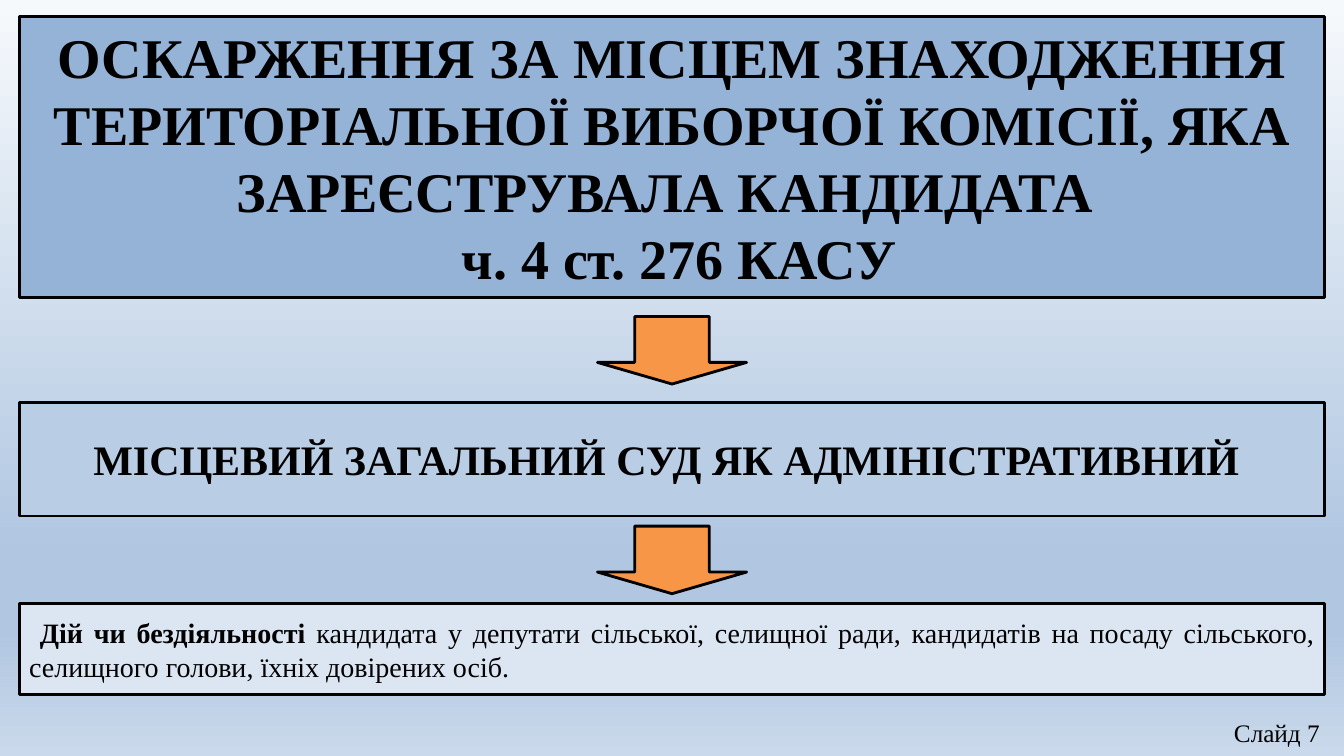
from dataclasses import dataclass

from lxml import etree
from pptx import Presentation
from pptx.dml.color import RGBColor
from pptx.enum import shapes, text
from pptx.oxml.ns import qn
from pptx.util import Inches, Pt

FONT = "Times New Roman"
BLACK = RGBColor(0x00, 0x00, 0x00)
TITLE_BLUE = RGBColor(0x95, 0xB3, 0xD7)
COURT_BLUE = RGBColor(0xB9, 0xCD, 0xE5)
SUBJECT_BLUE = RGBColor(0xDC, 0xE6, 0xF2)
ORANGE = RGBColor(0xF7, 0x96, 0x46)
SKY_TOP = RGBColor(0xF6, 0xF9, 0xFC)
SKY_MIDDLE = RGBColor(0xB0, 0xC6, 0xE1)
SKY_BOTTOM = RGBColor(0xCA, 0xD9, 0xEB)
SKY_STOPS = [(0, SKY_TOP), (74, SKY_MIDDLE), (83, SKY_MIDDLE), (100, SKY_BOTTOM)]

BOX_LEFT, BOX_WIDTH = 0.19, 12.95
ARROW_WIDTH, ARROW_HEIGHT = 1.48, 0.67
ARROW_LEFT = BOX_LEFT + (BOX_WIDTH - ARROW_WIDTH) / 2
ARROW_TOPS = (3.14, 5.22)


@dataclass
class Box:
    top: float
    height: float
    fill: RGBColor
    size: int
    align: text.PP_ALIGN
    paragraphs: list[list[tuple[str, bool]]]  # runs of (words, bold)
    line: float = 2


TITLE = Box(0.16, 2.79, TITLE_BLUE, 40, text.PP_ALIGN.CENTER, [
    [("ОСКАРЖЕННЯ ЗА МІСЦЕМ ЗНАХОДЖЕННЯ ТЕРИТОРІАЛЬНОЇ ВИБОРЧОЇ КОМІСІЇ, "
      "ЯКА ЗАРЕЄСТРУВАЛА КАНДИДАТА ", True)],
    [(" ч. 4 ст. 276 КАСУ", True)],
], line=2.25)
BOXES = [
    Box(3.99, 1.13, COURT_BLUE, 30, text.PP_ALIGN.CENTER,
        [[("МІСЦЕВИЙ ЗАГАЛЬНИЙ СУД ЯК АДМІНІСТРАТИВНИЙ ", True)]]),
    Box(5.99, 0.9, SUBJECT_BLUE, 20, text.PP_ALIGN.JUSTIFY,
        [[(" Дій чи бездіяльності ", True),
          ("кандидата у депутати сільської, селищної ради, кандидатів на посаду "
           "сільського, селищного голови, їхніх довірених осіб.", False)]]),
]


def paint(sp, fill: RGBColor, line: float) -> None:
    sp.fill.solid()
    sp.fill.fore_color.rgb = fill
    sp.line.color.rgb = BLACK
    sp.line.width = Pt(line)


def style_font(font, size: int, bold: bool) -> None:
    font.name, font.size, font.bold = FONT, Pt(size), bold
    font.color.rgb = BLACK


def format_box(sp, box: Box) -> None:
    sp.left, sp.top = Inches(BOX_LEFT), Inches(box.top)
    sp.width, sp.height = Inches(BOX_WIDTH), Inches(box.height)
    paint(sp, box.fill, box.line)
    tf = sp.text_frame
    tf.word_wrap = True
    tf.auto_size = text.MSO_AUTO_SIZE.NONE
    tf.vertical_anchor = text.MSO_ANCHOR.MIDDLE
    for i, runs in enumerate(box.paragraphs):
        p = tf.add_paragraph() if i else tf.paragraphs[0]
        p.alignment = box.align
        for words, bold in runs:
            r = p.add_run()
            r.text = words
            style_font(r.font, box.size, bold)


def add_shape(s, kind: shapes.MSO_SHAPE, left: float, top: float,
              width: float, height: float):
    sp = s.shapes.add_shape(kind, Inches(left), Inches(top), Inches(width), Inches(height))
    sp.shadow.inherit = False
    return sp


def set_background(s) -> None:
    fill = s.background.fill
    fill.gradient()
    fill.gradient_angle = 270
    stops = s.element.find(".//" + qn("a:gsLst"))
    for stop in list(stops):
        stops.remove(stop)
    for percent, color in SKY_STOPS:
        stop = etree.SubElement(stops, qn("a:gs"), pos=str(percent * 1000))
        etree.SubElement(stop, qn("a:srgbClr"), val=str(color))


def main() -> None:
    prs = Presentation()
    prs.slide_width, prs.slide_height = Inches(13.33), Inches(7.5)
    s = prs.slides.add_slide(prs.slide_layouts[5])
    set_background(s)

    # Title and the two boxes below it
    format_box(s.shapes.title, TITLE)
    for box in BOXES:
        sp = add_shape(s, shapes.MSO_SHAPE.RECTANGLE, BOX_LEFT, box.top, BOX_WIDTH, box.height)
        format_box(sp, box)

    # Arrows between the boxes
    for top in ARROW_TOPS:
        sp = add_shape(s, shapes.MSO_SHAPE.DOWN_ARROW, ARROW_LEFT, top, ARROW_WIDTH, ARROW_HEIGHT)
        sp.adjustments[0], sp.adjustments[1] = 0.5, 0.32
        paint(sp, ORANGE, 2)

    # Slide label
    sp = s.shapes.add_textbox(Inches(12.14), Inches(7.07), Inches(1.19), Inches(0.43))
    tf = sp.text_frame
    tf.word_wrap = True
    tf.text = "Слайд 7"
    style_font(tf.paragraphs[0].runs[0].font, 18, False)

    prs.save("out.pptx")


if __name__ == "__main__":
    main()
